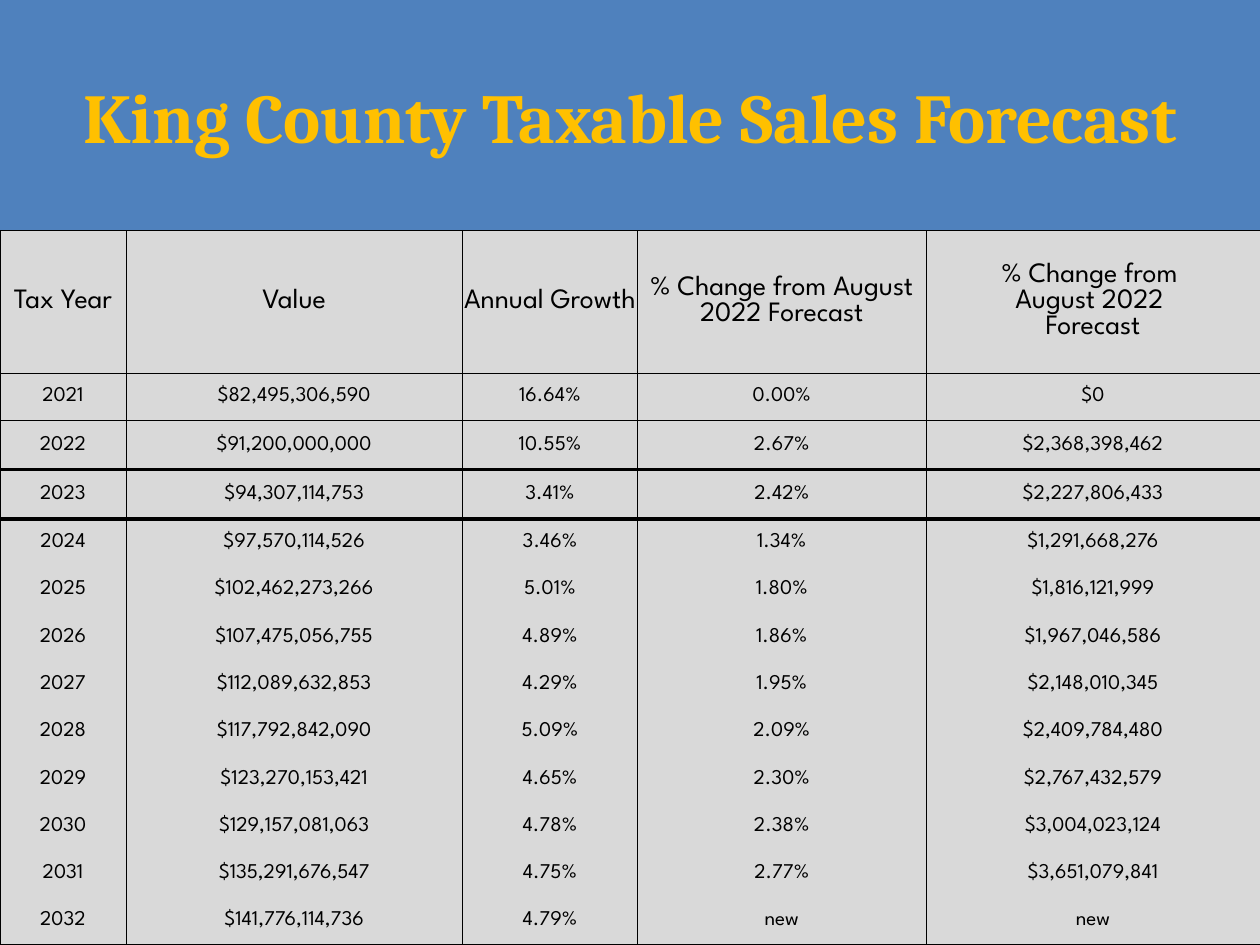
from dataclasses import dataclass

from lxml import etree
from pptx import Presentation, util as u
from pptx.dml.color import RGBColor
from pptx.enum import text
from pptx.oxml import ns

# Content
TITLE = "King County Taxable Sales Forecast"
HEADINGS = ("Tax Year", "Value", "Annual Growth", "% Change from August 2022 Forecast",
            "% Change from \nAugust 2022 \nForecast")
FORECAST = [
    ("2021", "$82,495,306,590", "16.64%", "0.00%", "$0"),
    ("2022", "$91,200,000,000", "10.55%", "2.67%", "$2,368,398,462"),
    ("2023", "$94,307,114,753", "3.41%", "2.42%", "$2,227,806,433"),
    ("2024", "$97,570,114,526", "3.46%", "1.34%", "$1,291,668,276"),
    ("2025", "$102,462,273,266", "5.01%", "1.80%", "$1,816,121,999"),
    ("2026", "$107,475,056,755", "4.89%", "1.86%", "$1,967,046,586"),
    ("2027", "$112,089,632,853", "4.29%", "1.95%", "$2,148,010,345"),
    ("2028", "$117,792,842,090", "5.09%", "2.09%", "$2,409,784,480"),
    ("2029", "$123,270,153,421", "4.65%", "2.30%", "$2,767,432,579"),
    ("2030", "$129,157,081,063", "4.78%", "2.38%", "$3,004,023,124"),
    ("2031", "$135,291,676,547", "4.75%", "2.77%", "$3,651,079,841"),
    ("2032", "$141,776,114,736", "4.79%", "new", "new"),
]
LAST_ACTUAL_YEAR = "2022"


@dataclass(frozen=True)
class Theme:
    band: str = "4F81BD"
    gold: str = "FFC000"
    cell: str = "D9D9D9"
    ink: str = "000000"
    title_font: str = "Cambria"
    table_font: str = "League Spartan"
    title_size: int = 40
    heading_size: int = 16
    body_size: int = 12
    thin: float = 0.5
    outline: float = 0.75
    thick: float = 2


THEME = Theme()
NO_STYLE = "{2D5ABB26-0587-4C30-8999-92F81FD0307C}"

# Layout, in inches
WIDTH, HEIGHT = 10, 7.5
BAND_HEIGHT = 1.83
COLUMNS = (1, 2.67, 1.39, 2.29, 2.65)
TOP_ROWS = (1.13, 0.38, 0.39, 0.39)
rows = [HEADINGS, *FORECAST]
even_row = (HEIGHT - BAND_HEIGHT - sum(TOP_ROWS)) / (len(rows) - len(TOP_ROWS))
row_heights = [*TOP_ROWS, *[even_row] * (len(rows) - len(TOP_ROWS))]


def rgb(color):
    return RGBColor.from_string(color)


def add_line(parent, tag, points):
    line = etree.SubElement(parent, ns.qn(tag), w=str(u.Pt(points)))
    fill = etree.SubElement(line, ns.qn("a:solidFill"))
    etree.SubElement(fill, ns.qn("a:srgbClr"), val=THEME.ink)
    return line


def style_text(para, font, size, color, bold=False):
    para.alignment = text.PP_ALIGN.CENTER
    para.font.name, para.font.size, para.font.bold = font, u.Pt(size), bold
    para.font.color.rgb = rgb(color)


def rule_below(index):
    """Weight of the line under a row; None where rows run together."""
    if rows[index][0] == LAST_ACTUAL_YEAR:
        return THEME.thick
    return THEME.thin if index in (0, len(rows) - 1) else None


def fill_cell(cell, words, size, above, below):
    cell.margin_left = cell.margin_right = cell.margin_top = cell.margin_bottom = 0
    cell.vertical_anchor = text.MSO_ANCHOR.MIDDLE
    para = cell.text_frame.paragraphs[0]
    para.text = words
    style_text(para, THEME.table_font, size, THEME.ink)
    weights = {"a:lnL": THEME.thin, "a:lnR": THEME.thin, "a:lnT": above, "a:lnB": below}
    for tag, points in weights.items():
        if points:
            add_line(cell._tc.get_or_add_tcPr(), tag, points)
    cell.fill.solid()
    cell.fill.fore_color.rgb = rgb(THEME.cell)


deck = Presentation()
deck.slide_width, deck.slide_height = u.Inches(WIDTH), u.Inches(HEIGHT)
page = deck.slides.add_slide(deck.slide_layouts[5])

# Title band
band = page.shapes.title
band.left, band.top, band.width, band.height = 0, 0, u.Inches(WIDTH), u.Inches(BAND_HEIGHT)
band.fill.solid()
band.fill.fore_color.rgb = rgb(THEME.band)
band.text_frame.vertical_anchor = text.MSO_ANCHOR.MIDDLE
heading = band.text_frame.paragraphs[0]
heading.text = TITLE
style_text(heading, THEME.title_font, THEME.title_size, THEME.gold, bold=True)
# The outline belongs to the run and comes first in its properties
span_properties = heading.runs[0]._r.get_or_add_rPr()
span_properties.insert(0, add_line(span_properties, "a:ln", THEME.outline))

# Forecast table
frame = page.shapes.add_table(len(rows), len(COLUMNS), 0, u.Inches(BAND_HEIGHT),
                              u.Inches(WIDTH), u.Inches(HEIGHT - BAND_HEIGHT))
table = frame.table
table.first_row = table.horz_banding = False
table._tbl.tblPr.find(ns.qn("a:tableStyleId")).text = NO_STYLE
for column, width in zip(table.columns, COLUMNS):
    column.width = u.Inches(width)
for index, values in enumerate(rows):
    table.rows[index].height = u.Inches(row_heights[index])
    size = THEME.body_size if index else THEME.heading_size
    above = rule_below(index - 1) if index else THEME.thin
    for cell, words in zip(table.rows[index].cells, values):
        fill_cell(cell, words, size, above, rule_below(index))

deck.save("out.pptx")
